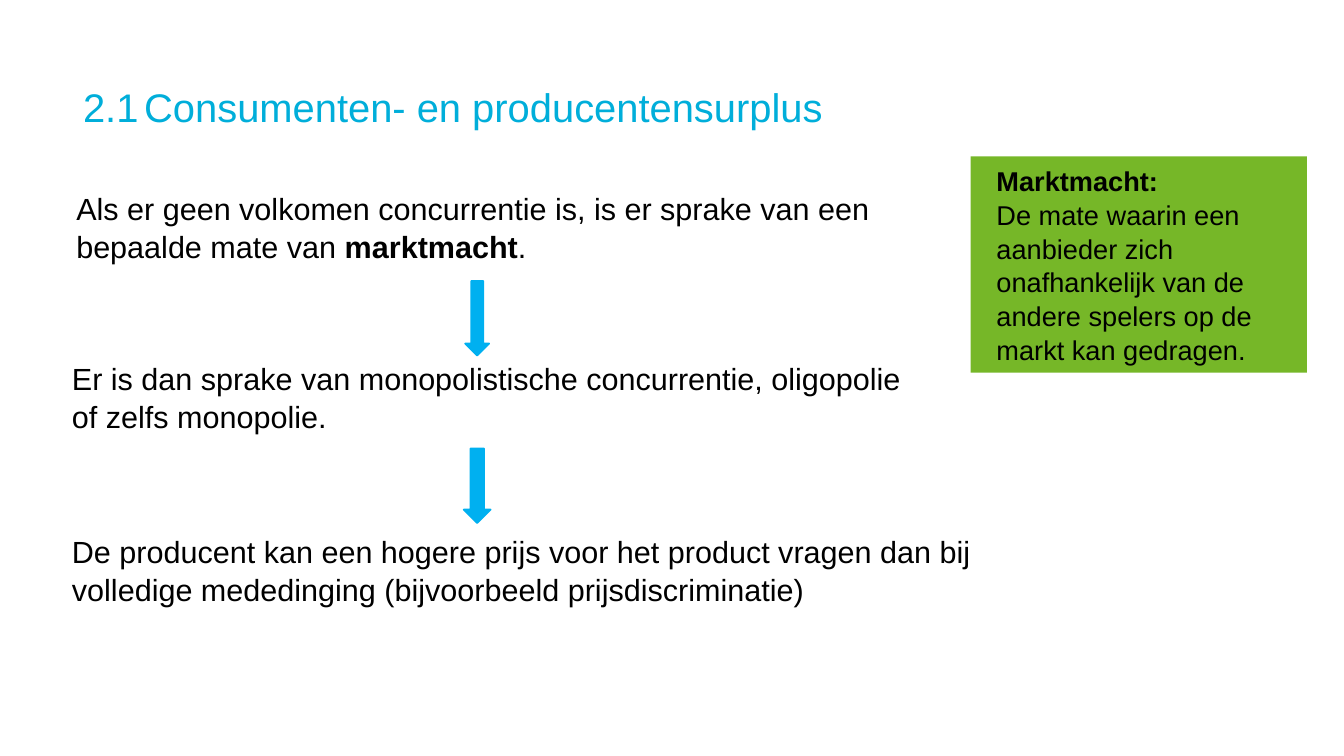
from pptx import Presentation
from pptx.dml.color import RGBColor
from pptx.enum.shapes import MSO_SHAPE
from pptx.enum.text import MSO_ANCHOR, PP_ALIGN
from pptx.util import Cm, Pt

RECT, ARROW = MSO_SHAPE.RECTANGLE, MSO_SHAPE.DOWN_ARROW
LEFT, TOP, MIDDLE = PP_ALIGN.LEFT, MSO_ANCHOR.TOP, MSO_ANCHOR.MIDDLE

# Content: a paragraph is a list of (text, bold) runs
TITLE = "2.1\tConsumenten- en producentensurplus"
STEPS = [  # left, top, width in cm, then runs
    (2.92, 7.7, 35.81, [
        ("Als er geen volkomen concurrentie is, is er sprake van een "
         "bepaalde mate van ", False),
        ("marktmacht", True), (".", False)]),
    (2.74, 14.78, 35.97, [
        ("Er is dan sprake van monopolistische concurrentie, oligopolie "
         "of zelfs monopolie.", False)]),
    (2.74, 21.97, 39.78, [
        ("De producent kan een hogere prijs voor het product vragen dan bij "
         "volledige mededinging (bijvoorbeeld prijsdiscriminatie)", False)]),
]
TERM = [
    [("Marktmacht:", True)],
    [("De mate waarin een aanbieder zich onafhankelijk van de andere "
      "spelers op de markt kan gedragen.", False)],
]
ARROWS = [(11.68, 1.0), (18.64, 1.12)]  # top, width in cm
MID = 19.83  # shared centre of the arrows
COLORS = {"title": "00AEDA", "text": "000000",
          "term": "76B728", "arrow": "00B0F0"}


def color(name):
    return RGBColor.from_string(COLORS[name])


def style(para, size, name):
    para.alignment = LEFT
    para.font.name = "Arial"
    para.font.size = Pt(size)
    para.font.color.rgb = color(name)


def inset(frame, side, edge):
    frame.word_wrap = True
    frame.margin_left = frame.margin_right = Cm(side)
    frame.margin_top = frame.margin_bottom = Cm(edge)


def write(frame, paras, size):
    for i, runs in enumerate(paras):
        para = frame.add_paragraph() if i else frame.paragraphs[0]
        style(para, size, "text")
        para.line_spacing = 1.04
        for text, bold in runs:
            run = para.add_run()
            run.text = text
            run.font.bold = bold


def draw(kind, box, name):
    shape = slide.shapes.add_shape(kind, *map(Cm, box))
    shape.shadow.inherit = False
    shape.fill.solid()
    shape.fill.fore_color.rgb = color(name)
    return shape


prs = Presentation()
prs.slide_width, prs.slide_height = Cm(55.85), Cm(31.42)
slide = prs.slides.add_slide(prs.slide_layouts[5])

# Title
title = slide.shapes.title
title.left, title.top, title.width, title.height = map(
    Cm, (3.45, 3.45, 48.9, 2.31))
title.text_frame.text = TITLE
title.text_frame.vertical_anchor = TOP
inset(title.text_frame, 0, 0)
style(title.text_frame.paragraphs[0], 47, "title")

# Chain of reasoning
for left, top, width, runs in STEPS:
    box = slide.shapes.add_textbox(Cm(left), Cm(top), Cm(width), Cm(3.33))
    inset(box.text_frame, 0.25, 0.13)
    write(box.text_frame, [runs], 36)

# Arrows between the steps
for top, width in ARROWS:
    arrow = draw(ARROW, (MID - width / 2, top, width, 3.1), "arrow")
    arrow.line.color.rgb = color("arrow")
    arrow.line.width = Pt(2)

# Definition
term = draw(RECT, (40.34, 6.5, 13.97, 8.99), "term")
term.line.fill.background()
term.text_frame.vertical_anchor = MIDDLE
inset(term.text_frame, 1.07, 0)
write(term.text_frame, TERM, 32)

prs.save("out.pptx")
